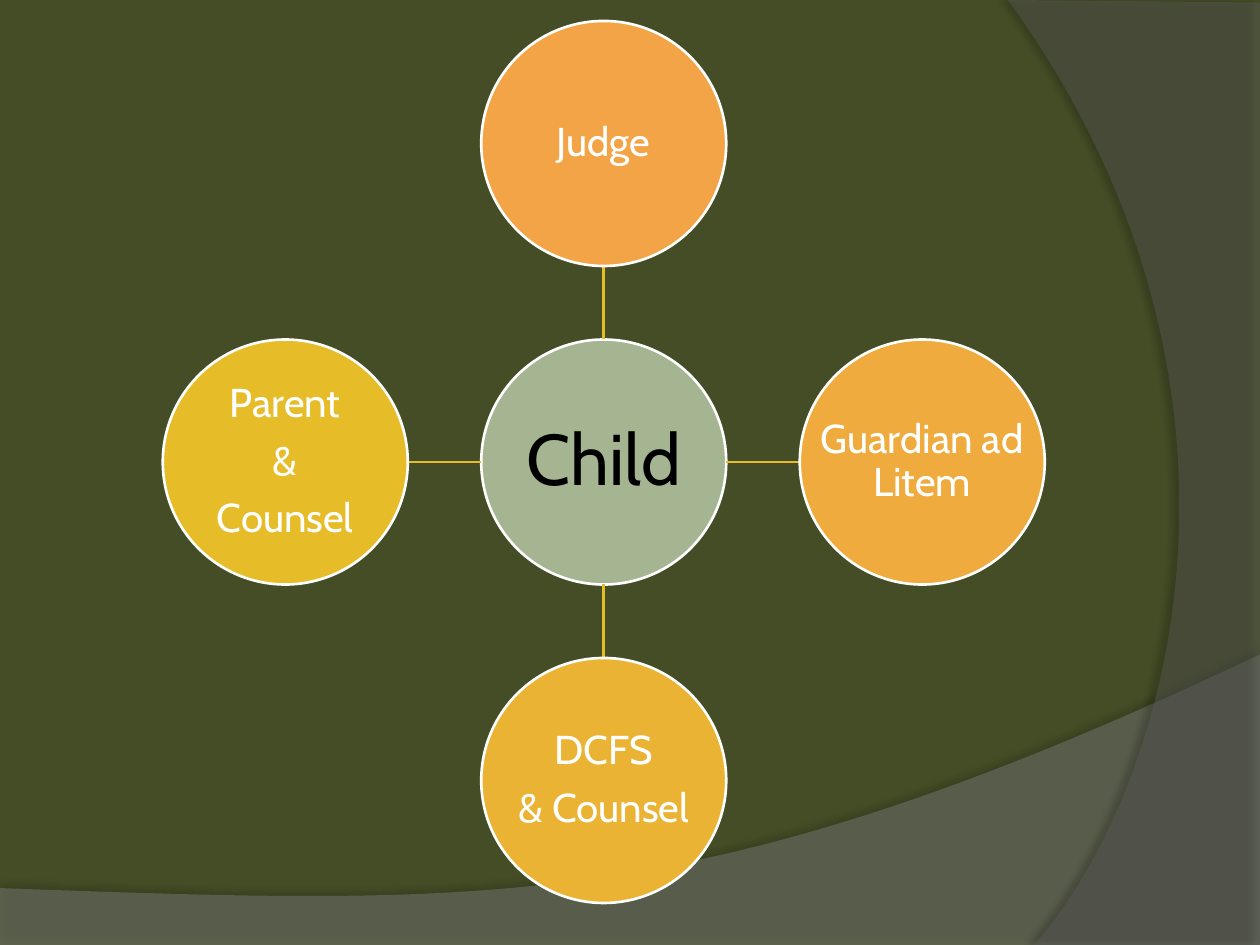
from lxml.etree import SubElement
from pptx import Presentation
from pptx.dml.color import RGBColor
from pptx.enum.shapes import MSO_CONNECTOR, MSO_SHAPE
from pptx.enum.text import MSO_ANCHOR, PP_ALIGN
from pptx.oxml.ns import qn
from pptx.util import Pt


def rgb(value):
    return RGBColor.from_string(value)


def add_text(s, box, text, size=23, color="FFFFFF", font="Cabin", inset=1.5):
    tf = s.shapes.add_textbox(*map(Pt, box)).text_frame
    tf.word_wrap = True
    tf.vertical_anchor = MSO_ANCHOR.MIDDLE
    tf.margin_left = tf.margin_right = Pt(inset)
    tf.margin_top = tf.margin_bottom = Pt(inset)
    for i, line in enumerate(text.split("\n")):
        p = tf.paragraphs[0] if i == 0 else tf.add_paragraph()
        p.alignment = PP_ALIGN.CENTER
        p.line_spacing = 0.9
        p.space_after = Pt(round(size * 0.35))
        r = p.add_run()
        r.text = line
        r.font.size = Pt(size)
        r.font.name = font
        r.font.color.rgb = rgb(color)


def add_circle(s, box, text, fill, **fmt):
    sp = s.shapes.add_shape(MSO_SHAPE.OVAL, *map(Pt, box))
    sp.shadow.inherit = False
    sp.fill.solid()
    sp.fill.fore_color.rgb = rgb(fill)
    sp.line.color.rgb = rgb("FFFFFF")
    sp.line.width = Pt(1.5)
    add_text(s, box, text, **fmt)


def add_spoke(s, x1, y1, x2, y2):
    c = s.shapes.add_connector(MSO_CONNECTOR.STRAIGHT, Pt(x1), Pt(y1), Pt(x2), Pt(y2))
    c.line.color.rgb = rgb("E7BC29")
    c.line.width = Pt(1.5)
    SubElement(c._element.spPr, qn("a:effectLst"))


def bezier(p0, p1, p2, p3, steps=60):
    for i in range(1, steps + 1):
        t = i / steps
        u = 1 - t
        yield tuple(u**3 * a + 3 * u * u * t * b + 3 * u * t * t * c + t**3 * d
                    for a, b, c, d in zip(p0, p1, p2, p3))


def add_panel(s, left, top, corners, curve, fill, alpha, shade, angle, dist):
    points = [(Pt(left + x), Pt(top + y)) for x, y in [*corners, *bezier(corners[-1], *curve)]]
    fb = s.shapes.build_freeform(*points[0])
    fb.add_line_segments(points[1:], close=True)
    sp = fb.convert_to_shape()
    sp.shadow.inherit = False
    sp.line.fill.background()
    sp.fill.solid()
    sp.fill.fore_color.rgb = rgb(fill)
    spPr = sp._element.spPr
    color = spPr.find(qn("a:solidFill"))[0]
    SubElement(color, qn("a:alpha"), val=str(alpha * 1000))
    shadow = SubElement(spPr.find(qn("a:effectLst")), qn("a:outerShdw"),
                        blurRad=str(Pt(4)), dist=str(Pt(dist)),
                        dir=str(angle * 60000), algn="ctr", rotWithShape="0")
    black = SubElement(shadow, qn("a:srgbClr"), val="000000")
    SubElement(black, qn("a:alpha"), val=str(shade * 1000))


def add_backdrop(s, width, height):
    s.background.fill.solid()
    s.background.fill.fore_color.rgb = rgb("444D26")
    add_panel(s, 0, height - 166,
              [(0, 133.5), (0, 166), (width, 166), (width, 0)],
              [(402.5, 150.5), (281.5, 143.5), (0, 133.5)],
              "7F7F7F", 45, shade=35, angle=270, dist=3.5)
    add_panel(s, width - 144, 0,
              [(144, 1.5), (144, height), (15, height)],
              [(97, 446), (157, 216), (0, 0)],
              "5E5E5E", 40, shade=45, angle=180, dist=4)


def add_radial(s, left, top, size, diameter, hub, nodes):
    radius = diameter / 2
    orbit = size / 2 - radius
    cx, cy = left + size / 2, top + size / 2

    def circle_box(dx, dy):
        return cx + dx * orbit - radius, cy + dy * orbit - radius, diameter, diameter

    add_circle(s, circle_box(0, 0), hub, "A5B592", size=41, color="000000", inset=2)
    for text, fill, dx, dy in nodes:
        gap = orbit - radius
        add_spoke(s, cx + dx * radius, cy + dy * radius,
                  cx + dx * (radius + gap), cy + dy * (radius + gap))
        add_circle(s, circle_box(dx, dy), text, fill)


def main():
    prs = Presentation()
    prs.slide_width, prs.slide_height = Pt(720), Pt(540)
    s = prs.slides.add_slide(prs.slide_layouts[6])
    add_backdrop(s, 720, 540)
    add_radial(s, 93, 12, 504, 140, "Child", [
        ("Judge", "F3A447", 0, -1),
        ("Guardian ad Litem", "EFAB3D", 1, 0),
        ("DCFS\n& Counsel", "EBB333", 0, 1),
        ("Parent\n&\nCounsel", "E7BC29", -1, 0),
    ])
    prs.save("out.pptx")


if __name__ == "__main__":
    main()
